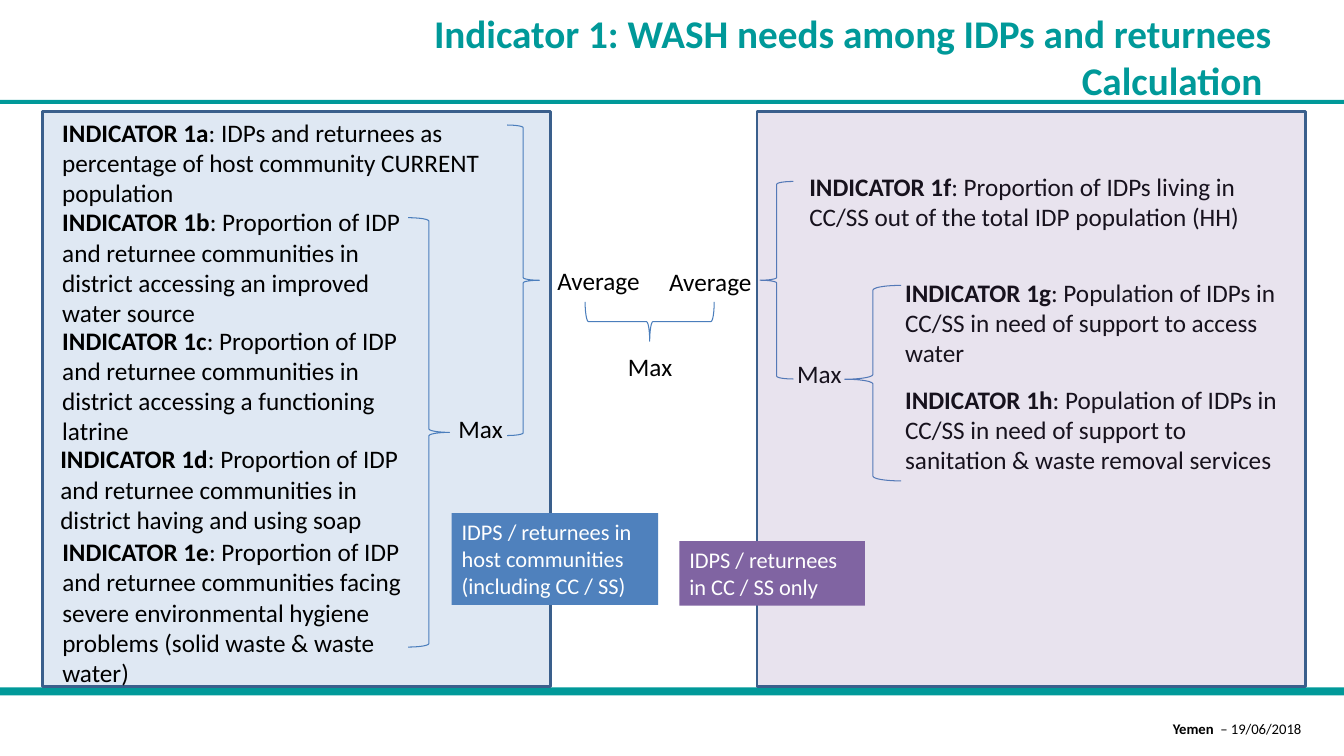
from typing import NamedTuple

from lxml import etree
from pptx import Presentation
from pptx.dml.color import RGBColor
from pptx.enum.shapes import MSO_SHAPE
from pptx.enum.text import MSO_ANCHOR, PP_ALIGN
from pptx.oxml.ns import qn
from pptx.util import Pt

RECT, BRACE = MSO_SHAPE.RECTANGLE, MSO_SHAPE.RIGHT_BRACE
LEFT, RIGHT = PP_ALIGN.LEFT, PP_ALIGN.RIGHT
TOP, MIDDLE = MSO_ANCHOR.TOP, MSO_ANCHOR.MIDDLE

TEAL = RGBColor(0x00, 0x99, 0x99)
BLUE = RGBColor(0x4F, 0x81, 0xBD)
PURPLE = RGBColor(0x80, 0x64, 0xA2)
PANEL_LINE = RGBColor(0x3A, 0x5F, 0x8C)
BRACE_LINE = RGBColor(0x4B, 0x7E, 0xBC)
BLACK = RGBColor(0x00, 0x00, 0x00)
WHITE = RGBColor(0xFF, 0xFF, 0xFF)

FONT = "Calibri"
PANEL_TOP, PANEL_HEIGHT = 79.9, 410.4
PANEL_OPACITY = 18


class Box(NamedTuple):
    x: float
    y: float
    w: float
    h: float


class Indicator(NamedTuple):
    letter: str
    text: str
    box: Box


class Label(NamedTuple):
    text: str
    x: float
    y: float
    w: float


class Brace(NamedTuple):
    box: Box
    rotation: int = 0
    point: float = 0.5


class Tag(NamedTuple):
    text: str
    box: Box
    color: RGBColor


INDICATORS = [
    Indicator("a", "IDPs and returnees as percentage of host community CURRENT population",
              Box(37.4, 79.9, 367.2, 72.7)),
    Indicator("b", "Proportion of IDP and returnee communities in district accessing "
              "an improved water source", Box(37.4, 144, 277.9, 94.3)),
    Indicator("c", "Proportion of IDP and returnee communities in district accessing "
              "a functioning latrine", Box(37.4, 228.5, 277.9, 94.3)),
    Indicator("d", "Proportion of IDP and returnee communities in district having "
              "and using soap", Box(36, 313.4, 277.9, 72.7)),
    Indicator("e", "Proportion of IDP and returnee communities facing severe environmental "
              "hygiene problems (solid waste & waste water)", Box(37.4, 379.6, 277.2, 116.6)),
    Indicator("f", "Proportion of IDPs living in CC/SS out of the total IDP population (HH)",
              Box(571, 118.8, 355, 51.1)),
    Indicator("g", "Population of IDPs in CC/SS in need of support to access water",
              Box(639.4, 194.4, 286.6, 72.7)),
    Indicator("h", "Population of IDPs in CC/SS in need of support to sanitation "
              "& waste removal services", Box(639.4, 270.7, 286.6, 72.7)),
]
LABELS = [
    Label("Max", 320.4, 291.6, 54),
    Label("Average", 391, 185.8, 85),
    Label("Max", 562.3, 252.7, 54),
    Label("Average", 470.9, 186.5, 85),
    Label("Max", 441.4, 247.7, 54),
]
BRACES = [
    Brace(Box(291.6, 155.5, 29.5, 306.7)),
    Brace(Box(362.2, 89.3, 23, 221.8)),
    Brace(Box(603.4, 203.8, 40.3, 139.7), 180, 0.52),
    Brace(Box(542.9, 129.6, 23.8, 141.1), 180),
    Brace(Box(450, 183.6, 28.1, 92.2), 90),
]
TAGS = [
    Tag("IDPS / returnees in host communities (including CC / SS)",
        Box(322.6, 366.5, 147.6, 65.5), BLUE),
    Tag("IDPS / returnees in CC / SS only", Box(485.3, 386.6, 132.5, 46.1), PURPLE),
]


def write(sp, runs: list[tuple[str, bool]], size: float, color=BLACK,
          align=LEFT, anchor=TOP) -> None:
    """Fill a shape with one paragraph of (text, bold) runs."""
    tf = sp.text_frame
    tf.word_wrap = True
    tf.vertical_anchor = anchor
    p = tf.paragraphs[0]
    p.alignment = align
    for text, bold in runs:
        r = p.add_run()
        r.text = text
        r.font.name = FONT
        r.font.size = Pt(size)
        r.font.bold = bold
        r.font.color.rgb = color


def add_text(s, box: Box, runs: list[tuple[str, bool]], size: float = 18, **style) -> None:
    write(s.shapes.add_textbox(*map(Pt, box)), runs, size, **style)


def add_rect(s, box: Box, color: RGBColor):
    sp = s.shapes.add_shape(RECT, *map(Pt, box))
    sp.shadow.inherit = False
    sp.fill.solid()
    sp.fill.fore_color.rgb = color
    sp.line.fill.background()
    return sp


def add_panel(s, x: float, w: float, color: RGBColor) -> None:
    sp = add_rect(s, Box(x, PANEL_TOP, w, PANEL_HEIGHT), color)
    fill_color = sp.fill._xPr.find(qn("a:solidFill"))[0]
    etree.SubElement(fill_color, qn("a:alpha"), val=str(PANEL_OPACITY * 1000))
    sp.line.color.rgb = PANEL_LINE
    sp.line.width = Pt(2)


def add_brace(s, brace: Brace) -> None:
    sp = s.shapes.add_shape(BRACE, *map(Pt, brace.box))
    sp.shadow.inherit = False
    sp.adjustments[1] = brace.point
    sp.rotation = brace.rotation
    sp.fill.background()
    sp.line.color.rgb = BRACE_LINE
    sp.line.width = Pt(0.75)


def main() -> None:
    prs = Presentation()
    prs.slide_width, prs.slide_height = Pt(960), Pt(540)
    s = prs.slides.add_slide(prs.slide_layouts[6])

    add_rect(s, Box(0, 491, 960, 5.8), TEAL)
    add_text(s, Box(457.2, 510.5, 479.5, 25.2),
             [("Yemen ", True), (" – 19/06/2018", False)], 10.5, align=RIGHT)
    add_rect(s, Box(0, 71.3, 960, 2.9), TEAL)
    add_panel(s, 30.2, 362.9, BLUE)
    add_text(s, Box(226.1, 25.9, 689, 28.8),
             [("Indicator 1: WASH needs among IDPs and returnees Calculation ", True)],
             28, color=TEAL, align=RIGHT, anchor=MIDDLE)

    for indicator in INDICATORS:
        add_text(s, indicator.box, [(f"INDICATOR 1{indicator.letter}", True),
                                    (f": {indicator.text}", False)])
    for label in LABELS:
        add_text(s, Box(label.x, label.y, label.w, 28.8), [(label.text, False)])
    for brace in BRACES:
        add_brace(s, brace)

    add_panel(s, 540.7, 391.7, PURPLE)
    for tag in TAGS:
        write(add_rect(s, tag.box, tag.color), [(tag.text, False)], 16, color=WHITE)

    prs.save("out.pptx")


if __name__ == "__main__":
    main()
